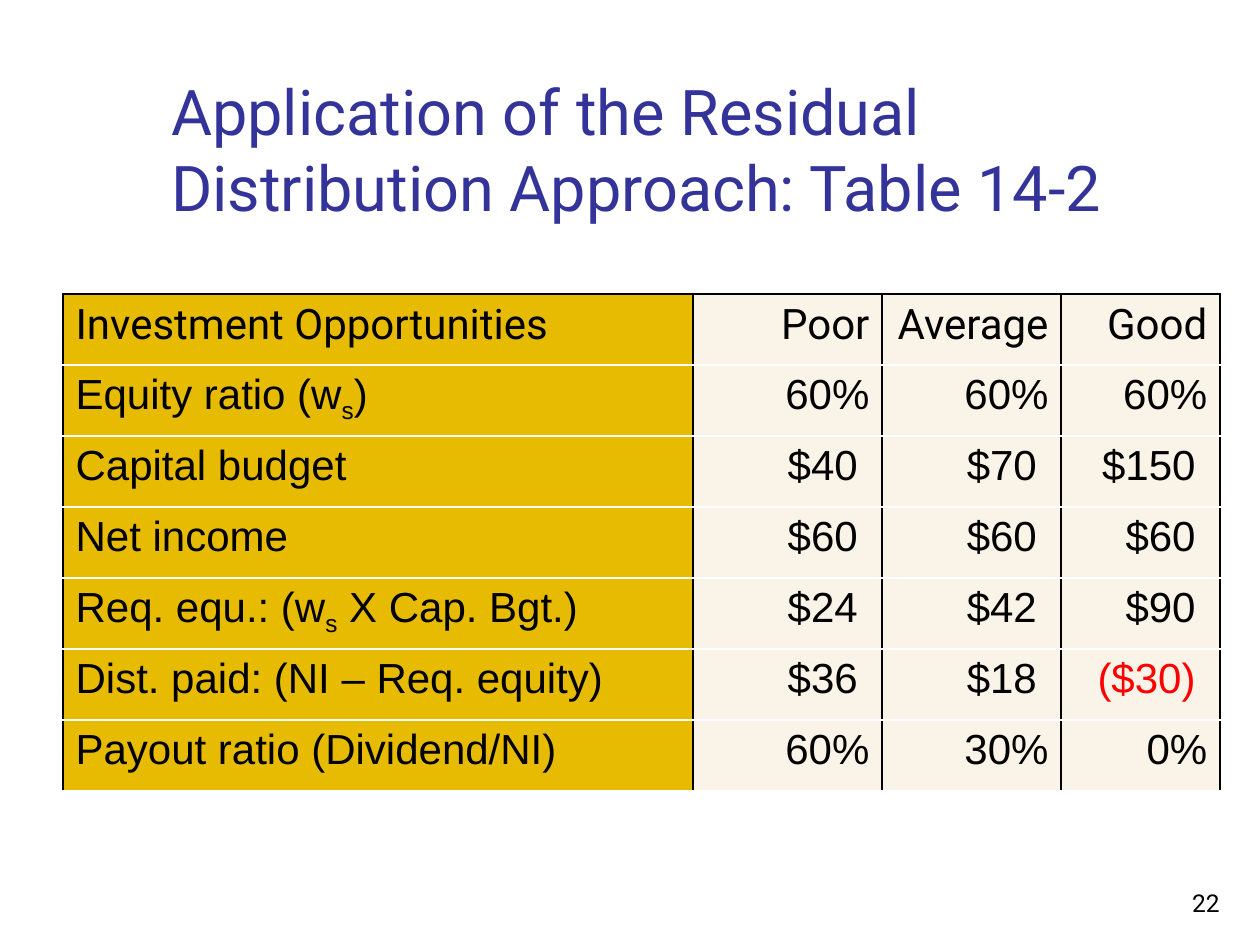
from lxml import etree
from pptx import Presentation
from pptx import util as u
from pptx.dml.color import RGBColor
from pptx.enum import text
from pptx.oxml import ns

TITLE = "Application of the Residual Distribution Approach: Table 14-2"
PAGE_NUMBER = "22"
OPPORTUNITIES = [
    ("Investment Opportunities", "Poor", "Average", "Good"),
    ("Equity ratio (w|s|)", "60%", "60%", "60%"),
    ("Capital budget", "$40 ", "$70 ", "$150 "),
    ("Net income", "$60 ", "$60 ", "$60 "),
    ("Req. equ.: (w|s| X Cap. Bgt.)", "$24 ", "$42 ", "$90 "),
    ("Dist. paid: (NI – Req. equity)", "$36 ", "$18 ", "($30) "),
    ("Payout ratio (Dividend/NI)", "60%", "30%", "0%"),
]
COLUMN_WIDTHS = (12.7, 3.81, 3.61, 3.2)
ROW_HEIGHT = 1.43
THEME = {
    "title": {"name": "Roboto", "size": u.Pt(36), "color": "333399"},
    "page": {"name": "Roboto", "size": u.Pt(14), "color": "000000"},
    "heading": {"name": "Roboto", "size": u.Pt(24), "color": "000000"},
    "body": {"name": "Arial", "size": u.Pt(24), "color": "000000"},
    "shortfall": {"name": "Arial", "size": u.Pt(24), "color": "FF0000"},
    "label_fill": "E7BB01",
    "value_fill": "FAF3E7",
    "outline": "000000",
    "rule": "FFFFFF",
}


def write(paragraph, words, style, align):
    """Write words into a paragraph, lowering each piece between bars."""
    paragraph.alignment = align
    for index, piece in enumerate(words.split("|")):
        run = paragraph.add_run()
        run.text = piece
        for key, value in THEME[style].items():
            if key == "color":
                run.font.color.rgb = RGBColor.from_string(value)
            else:
                setattr(run.font, key, value)
        if index % 2:
            run.font._element.set("baseline", "-25000")


def add_words(slide, box, words, style, align):
    """Add a wrapped, bottom-anchored text box."""
    frame = slide.shapes.add_textbox(*map(u.Cm, box)).text_frame
    settings = {"word_wrap": True, "vertical_anchor": text.MSO_ANCHOR.BOTTOM}
    for key, value in settings.items():
        setattr(frame, key, value)
    write(frame.paragraphs[0], words, style, align)


def add_borders(cell, top):
    """Draw the four one-point borders of a cell."""
    properties = cell._tc.get_or_add_tcPr()
    sides = {"lnL": THEME["outline"], "lnR": THEME["outline"], "lnT": top, "lnB": THEME["rule"]}
    for side, color in sides.items():
        line = etree.SubElement(properties, ns.qn(f"a:{side}"), w=str(u.Pt(1)))
        fill = etree.SubElement(line, ns.qn("a:solidFill"))
        etree.SubElement(fill, ns.qn("a:srgbClr"), val=color)


def add_opportunities(slide):
    """Add the table of investment opportunities."""
    size = (sum(COLUMN_WIDTHS), ROW_HEIGHT * len(OPPORTUNITIES))
    table = slide.shapes.add_table(
        len(OPPORTUNITIES), len(COLUMN_WIDTHS), *map(u.Cm, (1.27, 5.93, *size))
    ).table
    for flag in ("first_row", "horz_banding"):
        setattr(table, flag, False)
    for column, width in zip(table.columns, COLUMN_WIDTHS):
        column.width = u.Cm(width)
    for row_index, entries in enumerate(OPPORTUNITIES):
        table.rows[row_index].height = u.Cm(ROW_HEIGHT)
        for column_index, words in enumerate(entries):
            cell = table.cell(row_index, column_index)
            is_value = column_index > 0
            add_borders(cell, THEME["rule" if row_index else "outline"])
            cell.fill.solid()
            fill = THEME["value_fill" if is_value else "label_fill"]
            cell.fill.fore_color.rgb = RGBColor.from_string(fill)
            style = "body" if row_index else "heading"
            if words.startswith("($"):
                style = "shortfall"
            align = text.PP_ALIGN.RIGHT if is_value else text.PP_ALIGN.LEFT
            write(cell.text_frame.paragraphs[0], words, style, align)


def main():
    """Build and save the slide."""
    deck = Presentation()
    deck.slide_width, deck.slide_height = u.Cm(25.4), u.Cm(19.05)
    slide = deck.slides.add_slide(deck.slide_layouts[6])
    add_words(slide, (19.56, 17.35, 5.28, 1.27), PAGE_NUMBER, "page", text.PP_ALIGN.RIGHT)
    add_words(slide, (3.2, 0.58, 21.64, 4.06), TITLE, "title", text.PP_ALIGN.LEFT)
    add_opportunities(slide)
    deck.save("out.pptx")


if __name__ == "__main__":
    main()
